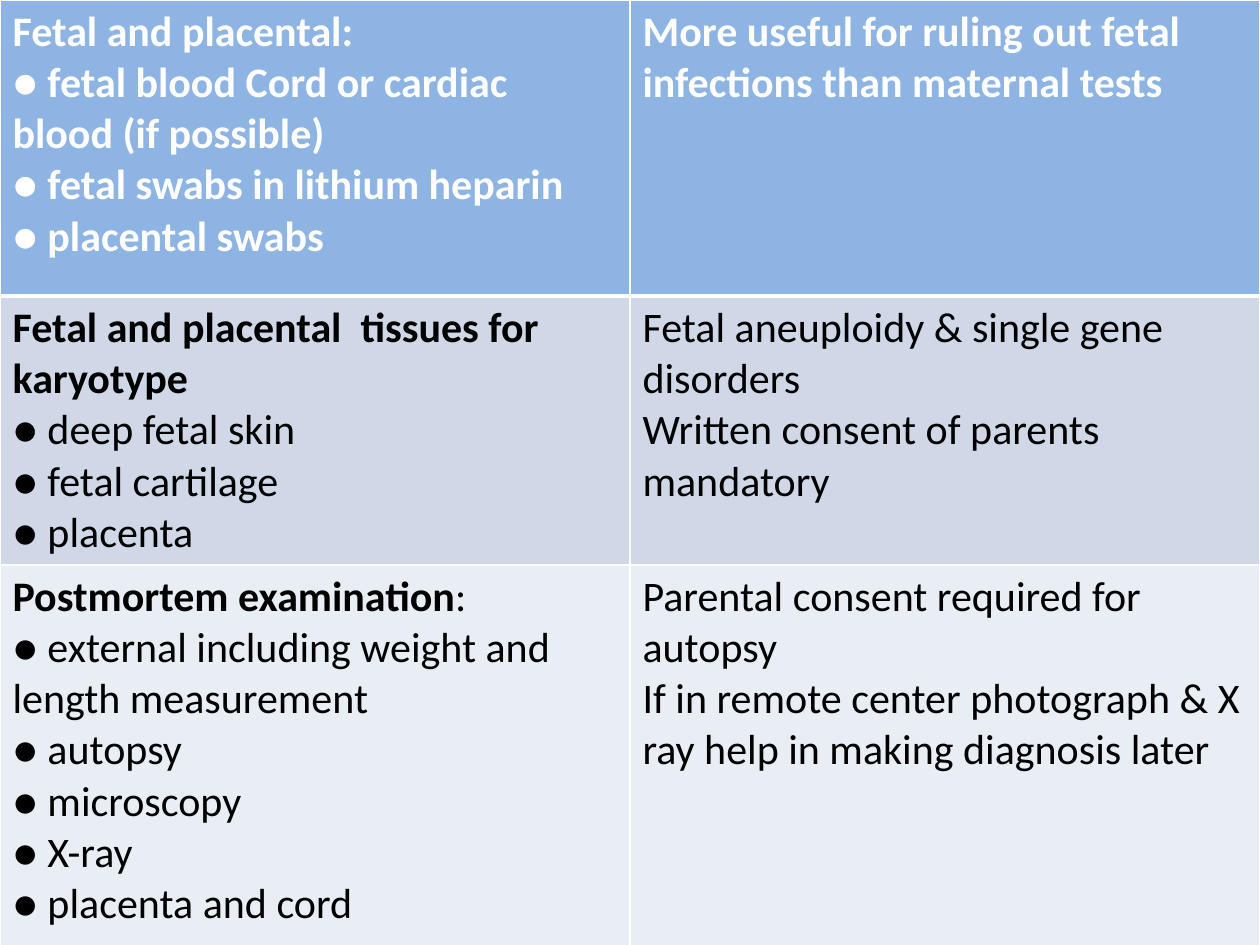
from pptx import Presentation
from pptx.dml.color import RGBColor
from pptx.oxml.ns import qn
from pptx.util import Inches, Pt
from lxml import etree

BLANK_LAYOUT = 6
COLORS = {
    "header": "8EB4E3",
    "band_dark": "D0D8E8",
    "band_light": "E9EDF4",
    "white": "FFFFFF",
    "black": "000000",
}
COLUMN_WIDTHS = [5, 5]
TABLE_HEIGHT = 7.69

ROWS = [
    {
        "height": 2.35, "fill": "header", "color": "white", "bottom_border": 3,
        "cells": [
            [
                [("Fetal and placental:", True)],
                [("● fetal blood Cord or cardiac blood (if possible)", True)],
                [("● fetal swabs in lithium heparin", True)],
                [("● placental swabs", True)],
            ],
            [[("More useful for ruling out fetal infections than maternal tests", True)]],
        ],
    },
    {
        "height": 1.91, "fill": "band_dark", "color": "black", "bottom_border": 1,
        "cells": [
            [
                [("Fetal and placental  tissues for karyotype", True)],
                [("● deep fetal skin", False)],
                [("● fetal cartilage", False)],
                [("● placenta", False)],
            ],
            [
                [("Fetal aneuploidy & single gene disorders", False)],
                [("Written consent of parents mandatory", False)],
            ],
        ],
    },
    {
        "height": 3.24, "fill": "band_light", "color": "black", "bottom_border": 1,
        "cells": [
            [
                [("Postmortem examination", True), (":", False)],
                [("● external including weight and length measurement", False)],
                [("● autopsy", False)],
                [("● microscopy", False)],
                [("● X-ray", False)],
                [("● placenta and cord", False)],
            ],
            [
                [("Parental consent required for autopsy", False)],
                [("If in remote center photograph & X ray help in making diagnosis later", False)],
            ],
        ],
    },
]


class SlideBuilder:
    """Holds the text style and the current slide, and adds elements to it."""

    def __init__(self, slide, font="Calibri", size=24):
        self.slide = slide
        self.font = font
        self.size = size

    def add_table(self, rows, column_widths, height):
        frame = self.slide.shapes.add_table(
            len(rows), len(column_widths), Inches(0), Inches(0),
            Inches(sum(column_widths)), Inches(height))
        table = frame.table
        for column, width in zip(table.columns, column_widths):
            column.width = Inches(width)
        for index, row in enumerate(rows):
            table.rows[index].height = Inches(row["height"])
            top_border = rows[index - 1]["bottom_border"] if index else 1
            borders = {"L": 1, "R": 1, "T": top_border, "B": row["bottom_border"]}
            for cell, paragraphs in zip(table.rows[index].cells, row["cells"]):
                self.add_text(cell.text_frame, paragraphs, row["color"])
                self.add_borders(cell, borders)
                cell.fill.solid()
                cell.fill.fore_color.rgb = RGBColor.from_string(COLORS[row["fill"]])
        frame.height = Inches(height)

    def add_text(self, text_frame, paragraphs, color):
        for index, runs in enumerate(paragraphs):
            paragraph = text_frame.add_paragraph() if index else text_frame.paragraphs[0]
            for text, bold in runs:
                run = paragraph.add_run()
                run.text = text
                run.font.name = self.font
                run.font.size = Pt(self.size)
                run.font.bold = bold
                run.font.color.rgb = RGBColor.from_string(COLORS[color])

    def add_borders(self, cell, borders):
        properties = cell._tc.get_or_add_tcPr()
        for side, width in borders.items():
            line = etree.SubElement(properties, qn(f"a:ln{side}"), w=str(Pt(width)))
            fill = etree.SubElement(line, qn("a:solidFill"))
            etree.SubElement(fill, qn("a:srgbClr"), val=COLORS["white"])


def main():
    presentation = Presentation()
    presentation.slide_width = Inches(10)
    presentation.slide_height = Inches(7.5)
    slide = presentation.slides.add_slide(presentation.slide_layouts[BLANK_LAYOUT])
    SlideBuilder(slide).add_table(ROWS, COLUMN_WIDTHS, TABLE_HEIGHT)
    presentation.save("out.pptx")


if __name__ == "__main__":
    main()
